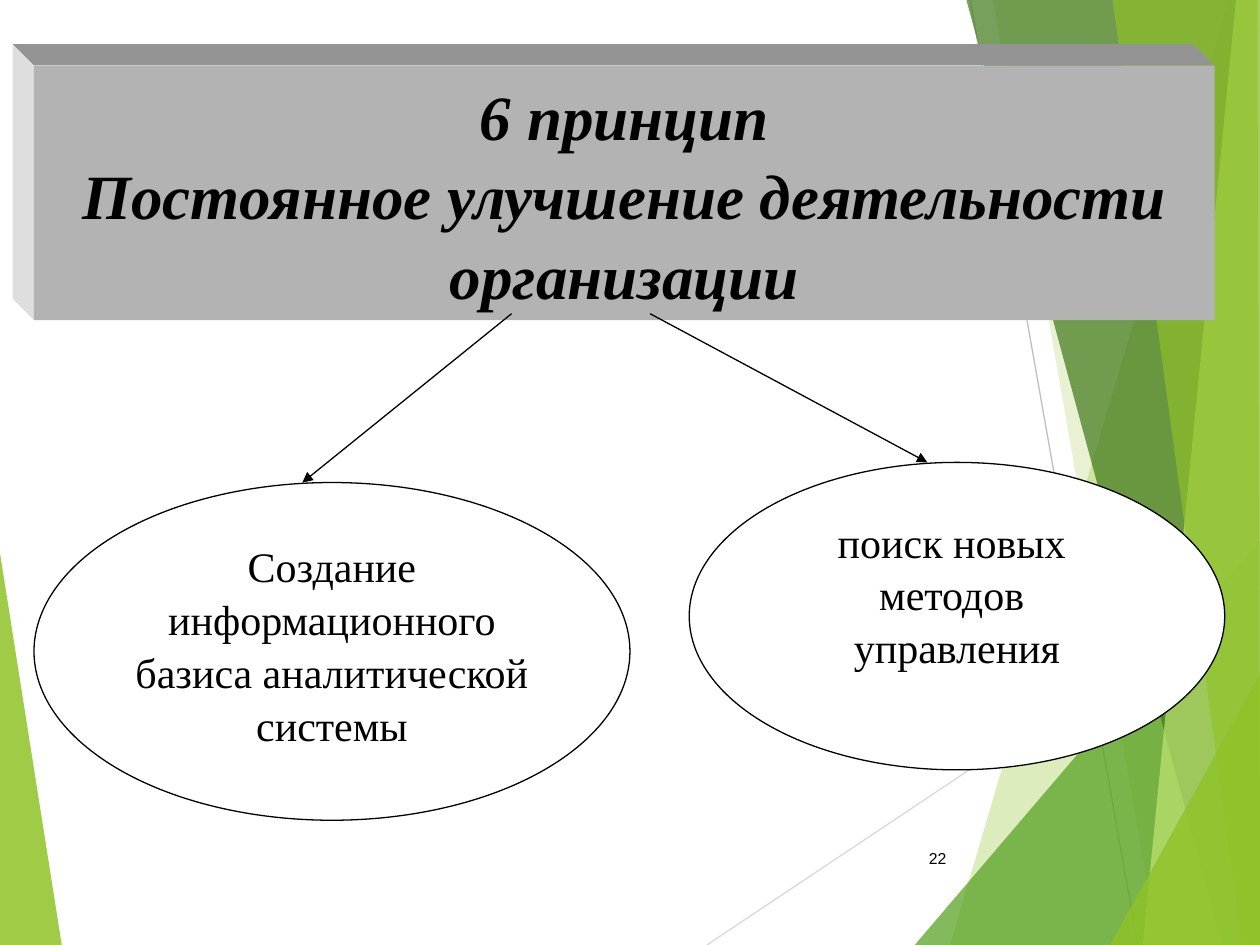
from pptx import Presentation
from pptx.dml.color import RGBColor
from pptx.enum.shapes import MSO_CONNECTOR, MSO_SHAPE
from pptx.enum.text import MSO_ANCHOR, PP_ALIGN
from pptx.oxml.ns import qn
from pptx.util import Inches, Pt
from lxml import etree

BLACK = RGBColor(0x00, 0x00, 0x00)
WHITE = RGBColor(0xFF, 0xFF, 0xFF)
LIME = RGBColor(0x90, 0xC2, 0x26)
GREEN = RGBColor(0x54, 0xA0, 0x21)
DARK_GREEN = RGBColor(0x3F, 0x78, 0x19)
PALE_GREEN = RGBColor(0xC0, 0xE4, 0x74)
PALE_GREY = RGBColor(0xD9, 0xD9, 0xD9)
LINE_GREY = RGBColor(0xBF, 0xBF, 0xBF)
BANNER_FRONT = RGBColor(0xB3, 0xB3, 0xB3)
BANNER_TOP = RGBColor(0x94, 0x94, 0x94)
BANNER_SIDE = RGBColor(0xDE, 0xDE, 0xDE)

STRAIGHT = MSO_CONNECTOR.STRAIGHT
RECTANGLE, OVAL = MSO_SHAPE.RECTANGLE, MSO_SHAPE.OVAL
CENTER, RIGHT = PP_ALIGN.CENTER, PP_ALIGN.RIGHT
TOP, MIDDLE = MSO_ANCHOR.TOP, MSO_ANCHOR.MIDDLE

SERIF, SANS = "Times New Roman", "Arial"
COLUMNS, ROWS = 100, 75
WIDTH, HEIGHT = Inches(10), Inches(7.5)

# Facets of the background: colour, opacity in percent, corners
LEFT_FACET = (LIME, 85, [(0, 43.9), (4.9, 75), (0, 75)])
RIGHT_FACETS = [
    (LIME, 30, [(97.5, 0), (75.4, 75), (100, 75), (100, 0)]),
    (LIME, 20, [(78.8, 0), (91.9, 75), (100, 75), (100, 0)]),
    (GREEN, 72, [(72.6, 75), (100, 42.9), (100, 75)]),
    (DARK_GREEN, 70, [(76.7, 0), (97, 75), (100, 75), (100, 0)]),
    (PALE_GREEN, 70, [(98.1, 0), (90.7, 75), (100, 75), (100, 0)]),
    (LIME, 65, [(88.3, 0), (98.6, 75), (100, 75), (99.8, 0)]),
    (LIME, 80, [(88.1, 75), (100, 53.5), (100, 75)]),
]


def col(count):
    return round(WIDTH * count / COLUMNS)


def row(count):
    return round(HEIGHT * count / ROWS)


def paint(shape, fill, outline=None):
    shape.shadow.inherit = False
    shape.fill.solid()
    shape.fill.fore_color.rgb = fill
    if outline is None:
        shape.line.fill.background()
    else:
        shape.line.color.rgb = outline
        shape.line.width = Pt(0.75)


def add_polygon(page, corners, fill, opacity=100):
    points = [(col(x), row(y)) for x, y in corners]
    builder = page.shapes.build_freeform(*points[0])
    builder.add_line_segments(points[1:], close=True)
    shape = builder.convert_to_shape()
    paint(shape, fill)
    if opacity < 100:
        color = shape.fill._xPr.find(qn("a:solidFill"))[0]
        etree.SubElement(color, qn("a:alpha"), val=str(opacity * 1000))


def add_line(page, start, end, color, arrow=False):
    line = page.shapes.add_connector(
        STRAIGHT, col(start[0]), row(start[1]), col(end[0]), row(end[1]))
    line.line.color.rgb = color
    line.line.width = Pt(0.75)
    properties = line._element.spPr
    if arrow:
        outline = properties.find(qn("a:ln"))
        etree.SubElement(outline, qn("a:tailEnd"), type="triangle")
    etree.SubElement(properties, qn("a:effectLst"))


def write(shape, paragraphs, size, font=SERIF, align=CENTER, anchor=TOP,
          spacing=1.05, strong=False):
    """Fill the shape with black text; strong means bold italic."""
    frame = shape.text_frame
    frame.word_wrap = True
    frame.vertical_anchor = anchor
    for index, text in enumerate(paragraphs):
        para = frame.add_paragraph() if index else frame.paragraphs[0]
        para.alignment = align
        para.line_spacing = spacing
        span = para.add_run()
        span.text = text
        span.font.name = font
        span.font.size = Pt(size)
        span.font.color.rgb = BLACK
        span.font.bold = span.font.italic = strong


def add_box(page, kind, left, top, width, height, fill, outline=None):
    box = page.shapes.add_shape(kind, col(left), row(top), col(width), row(height))
    paint(box, fill, outline)
    return box


def add_background(page):
    add_polygon(page, LEFT_FACET[2], *LEFT_FACET[:2])
    add_line(page, (56.1, 75), (100, 45.7), PALE_GREY)
    add_line(page, (77, 0), (90.3, 75), LINE_GREY)
    for fill, opacity, corners in RIGHT_FACETS:
        add_polygon(page, corners, fill, opacity)


def add_banner(page, left, top, width, height, depth, paragraphs):
    """A slab seen from the upper left: top face, side face and front."""
    right, bottom = left + width, top + height
    back_corner, front_corner = (left - depth, top - depth), (left, top)
    add_polygon(page, [back_corner, (right - depth, top - depth),
                       (right, top), front_corner], BANNER_TOP)
    add_polygon(page, [back_corner, front_corner, (left, bottom),
                       (left - depth, bottom - depth)], BANNER_SIDE)
    front = add_box(page, RECTANGLE, left, top, width, height, BANNER_FRONT)
    write(front, paragraphs, 36, anchor=MIDDLE, strong=True)


def add_oval(page, left, top, width, height, paragraphs):
    oval = add_box(page, OVAL, left, top, width, height, WHITE, BLACK)
    write(oval, paragraphs, 24)


def add_page_number(page, number):
    box = page.shapes.add_textbox(col(70.5), row(66.1), col(5.6), row(4))
    write(box, [number], 9, font=SANS, align=RIGHT, anchor=MIDDLE, spacing=1)


def main():
    deck = Presentation()
    deck.slide_width, deck.slide_height = WIDTH, HEIGHT
    page = deck.slides.add_slide(deck.slide_layouts[6])

    add_background(page)
    add_page_number(page, "22")
    add_banner(page, 2.7, 5.2, 93.7, 20.2, 1.7,
               ["6 принцип", "Постоянное улучшение деятельности организации"])
    add_oval(page, 54.7, 36.7, 42.5, 24.4,
             ["поиск новых ", "методов ", "управления"])
    add_line(page, (40.6, 24.9), (24, 38.3), BLACK, arrow=True)
    add_oval(page, 2.7, 38.3, 47.3, 26.8,
             ["Создание", "информационного базиса аналитической системы"])
    add_line(page, (51.6, 24.9), (73.6, 36.7), BLACK, arrow=True)

    deck.save("out.pptx")


if __name__ == "__main__":
    main()
